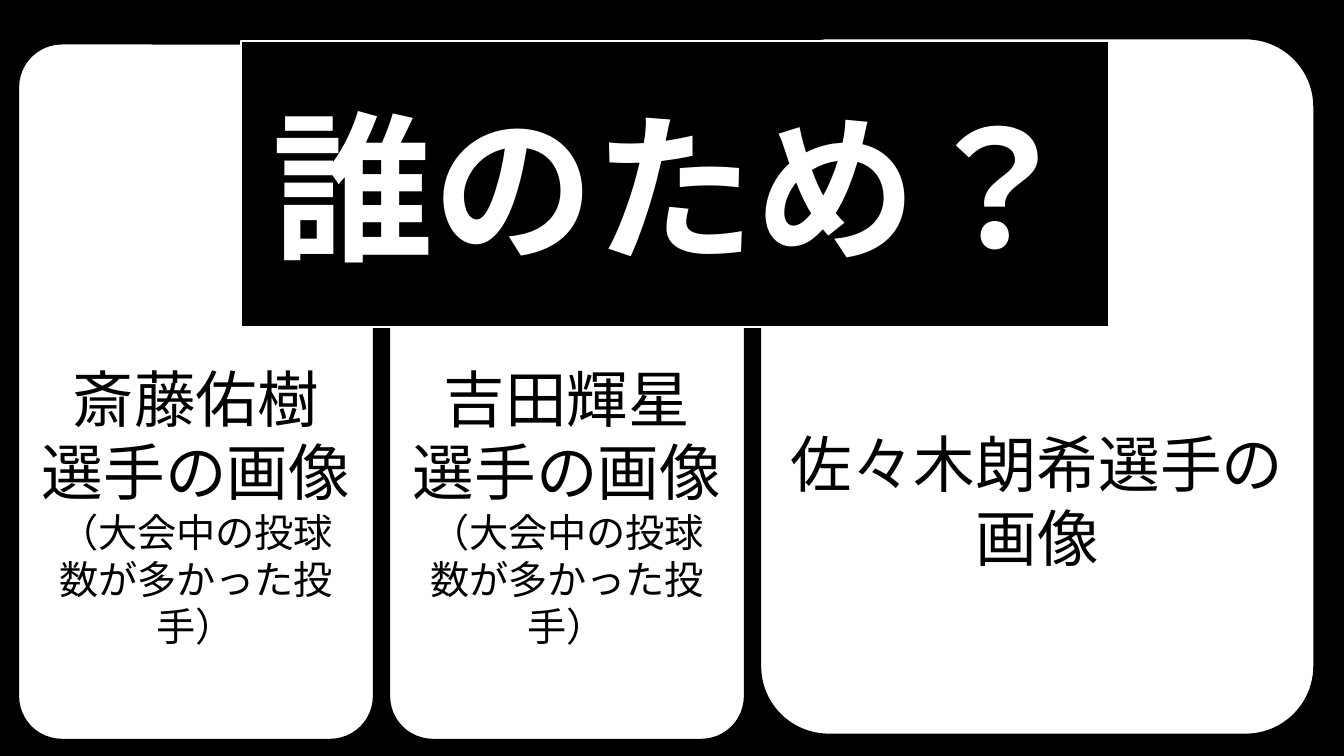
from pptx import Presentation
from pptx.dml.color import RGBColor
from pptx.enum import lang, shapes, text
from pptx.oxml import parse_xml
from pptx.oxml.ns import nsdecls
from pptx.util import Cm, Pt

BLACK = RGBColor(0, 0, 0)
WHITE = RGBColor(255, 255, 255)
FACE = "TeX Gyre Adventor"
NOTE = ("（大会中の投球数が多かった投手）", 28)
GAP = 0.33

# Left to right: top, width, lines of (wording, size)
CARDS = [
    (1.07, 9.02, [("斎藤佑樹", 44), ("選手の画像", 44), NOTE]),
    (1.07, 9.02, [("吉田輝星", 44), ("選手の画像", 44), NOTE]),
    (0.94, 14.02, [("佐々木朗希選手の画像", 44)]),
]


def paint(item, fill, line, width):
    item.fill.solid()
    item.fill.fore_color.rgb = fill
    item.line.color.rgb = line
    item.line.width = Pt(width)


def write(frame, lines, color, bold=False, top=0.13):
    form = dict(word_wrap=True, auto_size=text.MSO_AUTO_SIZE.NONE,
                vertical_anchor=text.MSO_ANCHOR.MIDDLE,
                margin_left=Cm(0.25), margin_right=Cm(0.25),
                margin_top=Cm(top), margin_bottom=Cm(0.13))
    for key, val in form.items():
        setattr(frame, key, val)
    for i, (words, size) in enumerate(lines):
        para = frame.add_paragraph() if i else frame.paragraphs[0]
        para.alignment = text.PP_ALIGN.CENTER
        run = para.add_run()
        run.text = words
        look = dict(name=FACE, size=Pt(size), bold=bold,
                    language_id=lang.MSO_LANGUAGE_ID.JAPANESE)
        for key, val in look.items():
            setattr(run.font, key, val)
        run.font.color.rgb = color


def add_card(slide, box, lines):
    card = slide.shapes.add_shape(shapes.MSO_SHAPE.ROUNDED_RECTANGLE, *map(Cm, box))
    card.adjustments[0] = 0.125
    card.shadow.inherit = False
    paint(card, WHITE, BLACK, 3)
    # The deep top margin keeps the words below the callout
    write(card.text_frame, lines, BLACK, top=5.84)


def add_callout(slide, box, words):
    title = slide.shapes.title
    for key, val in zip(("left", "top", "width", "height"), box):
        setattr(title, key, Cm(val))
    # Give the title a speech-bubble outline
    title.element.spPr.append(parse_xml(
        f'<a:prstGeom {nsdecls("a")} prst="wedgeRoundRectCallout"><a:avLst/></a:prstGeom>'))
    for i, val in enumerate((-0.144, -0.334, 0.167)):
        title.adjustments[i] = val
    paint(title, BLACK, WHITE, 1.5)
    write(title.text_frame, [(words, 115)], WHITE, bold=True)
    # Bring it in front of the cards
    slide.shapes.element.append(title.element)


def main():
    deck = Presentation()
    deck.slide_width, deck.slide_height = Cm(33.87), Cm(19.05)
    slide = deck.slides.add_slide(deck.slide_layouts[5])
    slide.background.fill.solid()
    slide.background.fill.fore_color.rgb = BLACK

    # Player cards
    left = 0.43
    for top, width, lines in CARDS:
        add_card(slide, (left, top, width, 17.6), lines)
        left += width + GAP

    # Title callout
    add_callout(slide, (6.07, 1.04, 21.89, 7.19), "誰のため？")
    deck.save("out.pptx")


if __name__ == "__main__":
    main()
